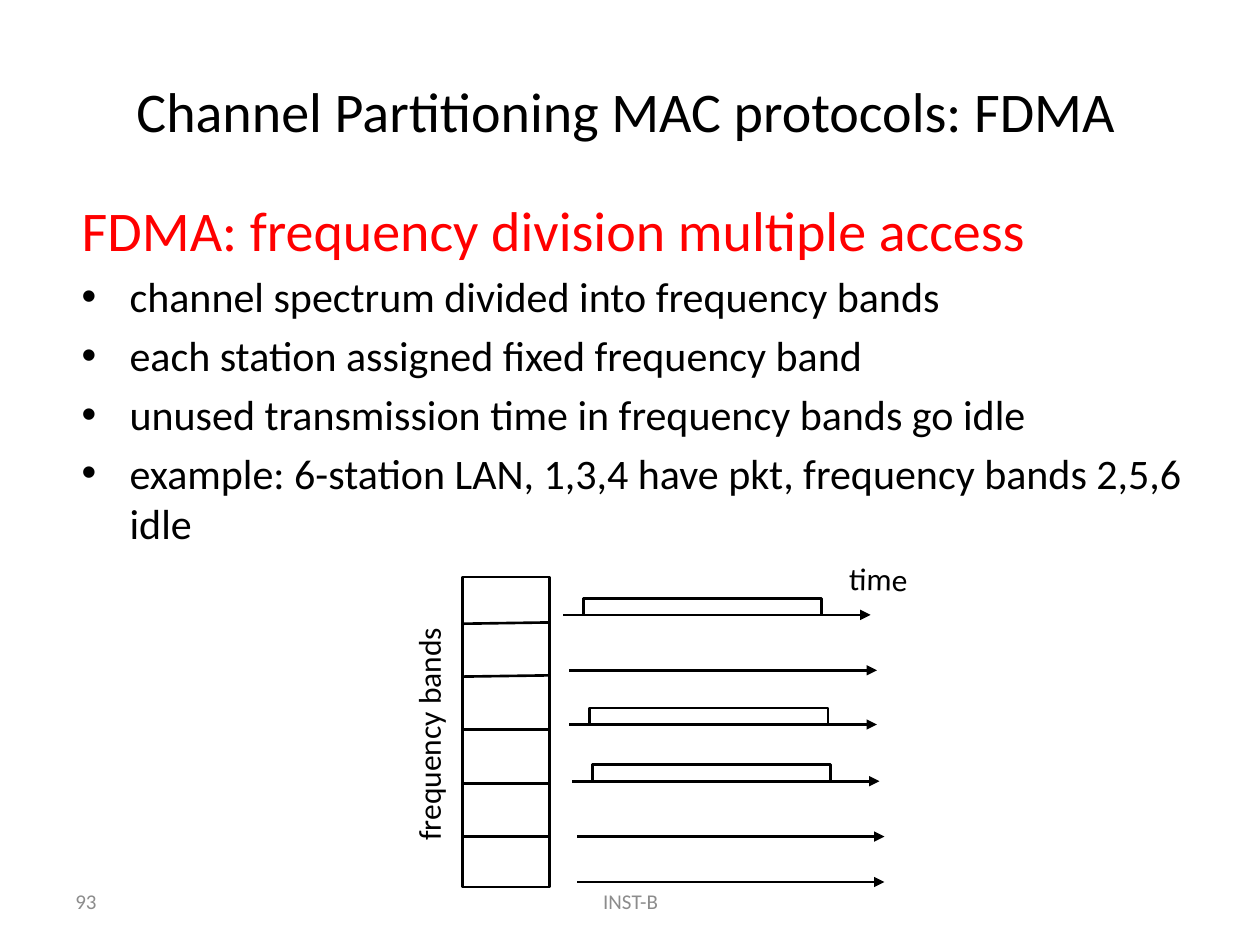
"""Build the slide on FDMA channel partitioning."""
from lxml.etree import SubElement
from pptx import Presentation
from pptx.dml.color import RGBColor
from pptx.enum.shapes import MSO_CONNECTOR, MSO_SHAPE
from pptx.enum.text import MSO_ANCHOR as ANCHOR, PP_ALIGN as ALIGN
from pptx.oxml.ns import qn
from pptx.util import Inches, Pt

BLACK = RGBColor(0x00, 0x00, 0x00)
WHITE = RGBColor(0xFF, 0xFF, 0xFF)
RED = RGBColor(0xFF, 0x00, 0x00)
GRAY = RGBColor(0x8C, 0x8C, 0x8C)

HEADING = "FDMA: frequency division multiple access"
BULLETS = [
    "channel spectrum divided into frequency bands",
    "each station assigned fixed frequency band",
    "unused transmission time in frequency bands go idle",
    "example: 6-station LAN, 1,3,4 have pkt, frequency bands 2,5,6 idle",
]
DIVIDERS = [(4.95, 4.94), (5.37, 5.36), (5.79, 5.79), (6.22, 6.22), (6.64, 6.64)]
TIMELINES = [
    (4.47, 4.88, True),
    (4.52, 5.32, False),
    (4.52, 5.75, True),
    (4.54, 6.2, True),
    (4.58, 6.64, False),
    (4.58, 7, False),
]
TIMELINE_LENGTH = 2.44
PULSE_OFFSET, PULSE_LENGTH, PULSE_HEIGHT = 0.16, 1.89, 0.13


def apply(target, values):
    for name, value in values.items():
        setattr(target, name, value)


class SlideBuilder:
    """Draws elements in one style on the current slide."""

    font_name = "Calibri"
    line_width = Pt(1.5)

    def __init__(self, presentation):
        self.slide = presentation.slides.add_slide(presentation.slide_layouts[5])
        self.shapes = self.slide.shapes

    def place(self, shape, box):
        apply(shape, dict(zip(("left", "top", "width", "height"), map(Inches, box))))

    def add_text(self, paragraph, text, size, color=BLACK, align=ALIGN.LEFT):
        paragraph.alignment = align
        run = paragraph.add_run()
        run.text = text
        apply(run.font, {"name": self.font_name, "size": Pt(size)})
        run.font.color.rgb = color

    def outline(self, shape):
        shape.line.width = self.line_width
        shape.line.color.rgb = BLACK

    def title(self, text, box):
        title = self.shapes.title
        self.place(title, box)
        title.text_frame.vertical_anchor = ANCHOR.MIDDLE
        self.add_text(title.text_frame.paragraphs[0], text, 32, align=ALIGN.CENTER)

    def label(self, text, box, size=18, color=BLACK, align=ALIGN.LEFT,
              anchor=ANCHOR.TOP, wrap=False, rotation=0):
        label = self.shapes.add_textbox(*map(Inches, box))
        label.rotation = rotation
        apply(label.text_frame, {"word_wrap": wrap, "vertical_anchor": anchor})
        self.add_text(label.text_frame.paragraphs[0], text, size, color, align)

    def body(self, heading, bullets, box):
        frame = self.shapes.add_textbox(*map(Inches, box)).text_frame
        frame.word_wrap = True
        rows = [(heading, 32, RED)] + [(text, 24, BLACK) for text in bullets]
        for index, (text, size, color) in enumerate(rows):
            paragraph = frame.add_paragraph() if index else frame.paragraphs[0]
            paragraph.space_before = Pt(size * 0.2)
            self.add_text(paragraph, text, size, color)
            properties = paragraph._p.get_or_add_pPr()
            properties.set("marL", str(Inches(0.38)))
            properties.set("indent", str(Inches(-0.38)))
            if index:
                SubElement(properties, qn("a:buFont"), typeface="Arial")
                SubElement(properties, qn("a:buChar"), char="•")

    def rectangle(self, box):
        rectangle = self.shapes.add_shape(MSO_SHAPE.RECTANGLE, *map(Inches, box))
        rectangle.shadow.inherit = False
        rectangle.fill.solid()
        rectangle.fill.fore_color.rgb = WHITE
        self.outline(rectangle)

    def line(self, start, end, arrow=False):
        line = self.shapes.add_connector(MSO_CONNECTOR.STRAIGHT, *map(Inches, start + end))
        self.outline(line)
        properties = line._element.spPr
        if arrow:
            SubElement(properties.find(qn("a:ln")), qn("a:tailEnd"), type="triangle")
        SubElement(properties, qn("a:effectLst"))

    def pulse(self, left, base):
        right, top = left + PULSE_LENGTH, base - PULSE_HEIGHT
        corners = [(left, top), (right, top), (right, base)]
        builder = self.shapes.build_freeform(Inches(left), Inches(base))
        builder.add_line_segments([(Inches(x), Inches(y)) for x, y in corners], close=False)
        pulse = builder.convert_to_shape()
        pulse.shadow.inherit = False
        pulse.fill.background()
        self.outline(pulse)


def main():
    presentation = Presentation()
    apply(presentation, {"slide_width": Inches(10), "slide_height": Inches(7.5)})
    builder = SlideBuilder(presentation)
    footer = {"size": 12, "color": GRAY, "anchor": ANCHOR.MIDDLE, "wrap": True}

    builder.label("93", (0.5, 6.95, 2.33, 0.4), **footer)
    builder.title("Channel Partitioning MAC protocols: FDMA", (0.25, 0.25, 9.44, 1.25))
    builder.body(HEADING, BULLETS, (0.55, 1.5, 8.99, 5.08))

    builder.rectangle((3.67, 4.58, 0.69, 2.46))
    for left_y, right_y in DIVIDERS:
        builder.line((3.68, left_y), (4.37, right_y))
    for left, y, busy in TIMELINES:
        builder.line((left, y), (left + TIMELINE_LENGTH, y), arrow=True)
        if busy:
            builder.pulse(left + PULSE_OFFSET, y)

    builder.label("frequency bands", (2.34, 5.51, 2.12, 0.4), rotation=270)
    builder.label("time", (6.64, 4.39, 0.72, 0.4), rotation=1.1)
    builder.label("INST-B", (3.42, 6.95, 3.17, 0.4), align=ALIGN.CENTER, **footer)
    presentation.save("out.pptx")


if __name__ == "__main__":
    main()
